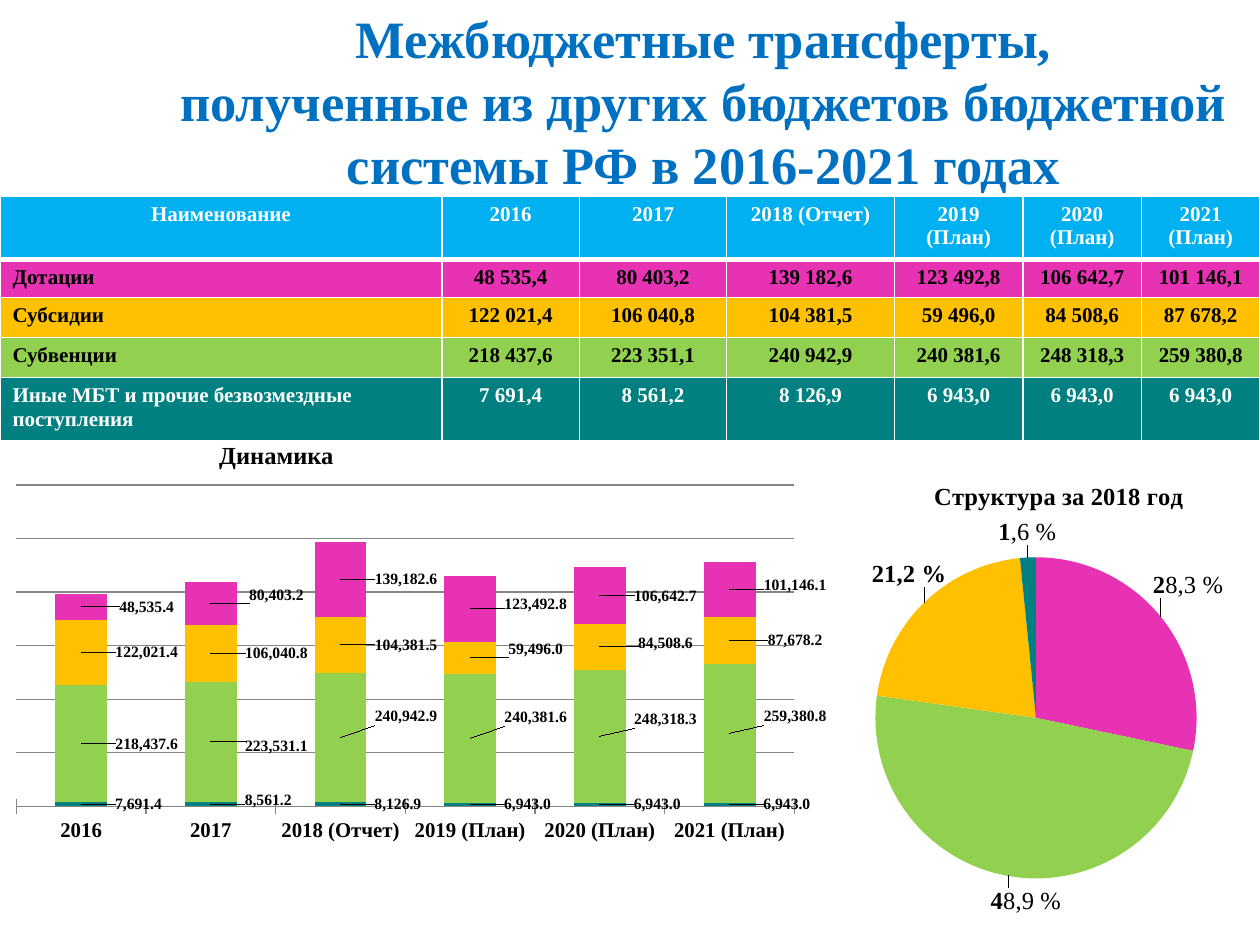
from lxml import etree
from pptx import Presentation
from pptx.chart.data import CategoryChartData
from pptx.dml.color import RGBColor
from pptx.enum.chart import XL_CHART_TYPE, XL_LABEL_POSITION, XL_TICK_MARK
from pptx.enum.text import MSO_AUTO_SIZE, PP_ALIGN
from pptx.oxml import parse_xml
from pptx.oxml.ns import nsdecls, qn
from pptx.util import Cm, Pt

STACKED, PIE = XL_CHART_TYPE.COLUMN_STACKED, XL_CHART_TYPE.PIE
OUTSIDE_END = XL_LABEL_POSITION.OUTSIDE_END
CROSS = XL_TICK_MARK.CROSS
FIT_SHAPE = MSO_AUTO_SIZE.SHAPE_TO_FIT_TEXT
LEFT, CENTER = PP_ALIGN.LEFT, PP_ALIGN.CENTER
SERIF = "Times New Roman"
COLORS = {
    "title": "0070C0", "header": "00B0F0", "grants": "E632B3",
    "subsidies": "FFC000", "subventions": "92D050", "other": "008080",
    "black": "000000", "white": "FFFFFF", "grid": "868686",
}
YEARS = ["2016", "2017", "2018 (Отчет)", "2019 (План)", "2020 (План)", "2021 (План)"]
TABLE_ROWS = [
    ("header", "white", 1.25, ["Наименование"] + YEARS),
    ("grants", "black", 0.76, ["Дотации", "48 535,4", "80 403,2", "139 182,6",
                               "123 492,8", "106 642,7", "101 146,1"]),
    ("subsidies", "black", 0.81, ["Субсидии", "122 021,4", "106 040,8", "104 381,5",
                                  "59 496,0", "84 508,6", "87 678,2"]),
    ("subventions", "black", 0.81, ["Субвенции", "218 437,6", "223 351,1", "240 942,9",
                                    "240 381,6", "248 318,3", "259 380,8"]),
    ("other", "white", 1.25, ["Иные МБТ и прочие безвозмездные поступления", "7 691,4",
                              "8 561,2", "8 126,9", "6 943,0", "6 943,0", "6 943,0"]),
]
COLUMN_WIDTHS = [8.91, 2.77, 2.97, 3.38, 2.59, 2.39, 2.39]
DYNAMICS = [
    ("other", [7691.4, 8561.2, 8126.9, 6943, 6943, 6943],
     0.07, [0, -0.01, 0, 0, 0, 0]),
    ("subventions", [218437.6, 223531.1, 240942.9, 240381.6, 248318.3, 259380.8],
     0.08, [0, 0.01, -0.05, -0.05, -0.04, -0.04]),
    ("subsidies", [122021.4, 106040.8, 104381.5, 59496, 84508.6, 87678.2],
     0.08, [0, 0, 0, -0.02, -0.01, 0]),
    ("grants", [48535.4, 80403.2, 139182.6, 123492.8, 106642.7, 101146.1],
     0.08, [0, -0.02, 0, -0.01, 0, -0.01]),
]
STRUCTURE = [
    ("grants", 28.3, ("2", "8,3 %"), (-0.03, -0.03)),
    ("subventions", 48.9, ("4", "8,9 %"), (0.12, 0.01)),
    ("subsidies", 21.2, ("21,2 %", ""), (0.06, -0.02)),
    ("other", 1.6, ("1", ",6 %"), (0, -0.01)),
]


def rgb(name):
    return RGBColor.from_string(COLORS[name])


def style(font, size, color="black", bold=True, face=SERIF):
    font.name, font.size, font.bold = face, Pt(size), bold
    font.color.rgb = rgb(color)


def paint(filled, color):
    filled.fill.solid()
    filled.fill.fore_color.rgb = rgb(color)


def manual_layout(**settings):
    inner = "".join(f'<c:{key} val="{value}"/>' for key, value in settings.items())
    return parse_xml(f'<c:layout {nsdecls("c")}><c:manualLayout>{inner}'
                     '</c:manualLayout></c:layout>')


def place_plot(chart, x, y, w, h):
    plot_area = chart._chartSpace.chart.plotArea
    for old in plot_area.findall(qn("c:layout")):
        plot_area.remove(old)
    plot_area.insert(0, manual_layout(layoutTarget="inner", xMode="edge", yMode="edge",
                                      x=x, y=y, w=w, h=h))


def shift_label(series, index, dx, dy):
    for label in series._element.iter(qn("c:dLbl")):
        number = label.find(qn("c:idx"))
        if number.get("val") == str(index):
            number.addnext(manual_layout(x=dx, y=dy))


def add_border(cell, side, width):
    properties = cell._tc.get_or_add_tcPr()
    line = etree.Element(qn(f"a:{side}"), w=str(Pt(width)))
    solid = etree.SubElement(line, qn("a:solidFill"))
    etree.SubElement(solid, qn("a:srgbClr"), val=COLORS["white"])
    properties.insert(len(properties) - 1, line)


def add_heading(slide, box, lines, size, color, align):
    frame = slide.shapes.add_textbox(*map(Cm, box)).text_frame
    frame.word_wrap = True
    frame.auto_size = FIT_SHAPE
    frame.text = "\n".join(lines)
    for paragraph in frame.paragraphs:
        paragraph.alignment = align
        style(paragraph.font, size, color)


def add_transfers_table(slide, box):
    table = slide.shapes.add_table(len(TABLE_ROWS), len(COLUMN_WIDTHS), *map(Cm, box)).table
    table.horz_banding = False
    for column, width in zip(table.columns, COLUMN_WIDTHS):
        column.width = Cm(width)
    for r, (fill, ink, height, texts) in enumerate(TABLE_ROWS):
        table.rows[r].height = Cm(height)
        for c, text in enumerate(texts):
            cell = table.cell(r, c)
            cell.text = text
            paragraph = cell.text_frame.paragraphs[0]
            paragraph.alignment = LEFT if r and not c else CENTER
            style(paragraph.font, 12, ink)
            paint(cell, fill)
            for side in ("lnL", "lnR", "lnT", "lnB"):
                thick = (r, side) in ((0, "lnB"), (1, "lnT"))
                add_border(cell, side, 3 if thick else 1)


def add_dynamics_chart(slide, box):
    names = {fill: texts[0] for fill, _, _, texts in TABLE_ROWS}
    data = CategoryChartData(number_format="#,##0.0")
    data.categories = YEARS
    for kind, values, _, _ in DYNAMICS:
        data.add_series(names[kind], values)
    chart = slide.shapes.add_chart(STACKED, *map(Cm, box), data).chart
    style(chart.font, 18, bold=False, face="Calibri")
    chart.has_legend = chart.has_title = False
    place_plot(chart, 0.02, 0.03, 0.95, 0.76)
    years, amounts = chart.category_axis, chart.value_axis
    style(years.tick_labels.font, 12)
    years.major_tick_mark = CROSS
    years.format.line.color.rgb = rgb("grid")
    amounts.visible = False
    amounts.minimum_scale, amounts.maximum_scale, amounts.major_unit = 0, 600000, 100000
    amounts.major_gridlines.format.line.color.rgb = rgb("grid")
    plot = chart.plots[0]
    plot.gap_width, plot.overlap, plot.vary_by_categories = 150, 100, False
    for series, (kind, _, dx, shifts) in zip(plot.series, DYNAMICS):
        paint(series.format, kind)
        for i, dy in enumerate(shifts):
            style(series.points[i].data_label.font, 9)
            shift_label(series, i, dx, dy)
        labels = series.data_labels
        labels.show_value = True
        labels.number_format, labels.number_format_is_linked = "#,##0.0", False
        style(labels.font, 9)


def add_structure_chart(slide, box):
    data = CategoryChartData()
    data.categories = ["1", "2", "3", "4"]
    data.add_series("Структура", [share for _, share, _, _ in STRUCTURE])
    chart = slide.shapes.add_chart(PIE, *map(Cm, box), data).chart
    style(chart.font, 18, bold=False, face="Calibri")
    chart.has_legend = False
    title = chart.chart_title
    title.text_frame.text = "Структура за 2018 год"
    style(title.text_frame.paragraphs[0].font, 14)
    for old in title._element.findall(qn("c:layout")):
        title._element.remove(old)
    title._element.find(qn("c:tx")).addnext(
        manual_layout(xMode="edge", yMode="edge", x=0.27, y=0.03))
    place_plot(chart, 0.15, 0.21, 0.71, 0.71)
    series = chart.plots[0].series[0]
    for i, (kind, _, parts, shift) in enumerate(STRUCTURE):
        point = series.points[i]
        paint(point.format, kind)
        label = point.data_label
        paragraph = label.text_frame.paragraphs[0]
        for bold, part in zip((True, False), parts):
            if part:
                run = paragraph.add_run()
                run.text = part
                style(run.font, 14, bold=bold)
        label.position = OUTSIDE_END
        shift_label(series, i, *shift)
    series.data_labels.show_value = True
    style(series.data_labels.font, 14)


def main():
    deck = Presentation()
    deck.slide_width, deck.slide_height = Cm(25.4), Cm(19.05)
    slide = deck.slides.add_slide(deck.slide_layouts[6])
    add_heading(slide, (2.97, 0, 22.43, 4.11),
                ["Межбюджетные трансферты,", "полученные из других бюджетов бюджетной",
                 "системы РФ в 2016-2021 годах"], 30, "title", CENTER)
    add_transfers_table(slide, (0, 3.96, 25.4, 4.88))
    add_dynamics_chart(slide, (0, 9.52, 16.66, 8.53))
    add_structure_chart(slide, (16.28, 9.32, 9.12, 9.12))
    add_heading(slide, (4.17, 8.74, 3.18, 0.86), ["Динамика"], 14, "black", LEFT)
    deck.save("out.pptx")


if __name__ == "__main__":
    main()
